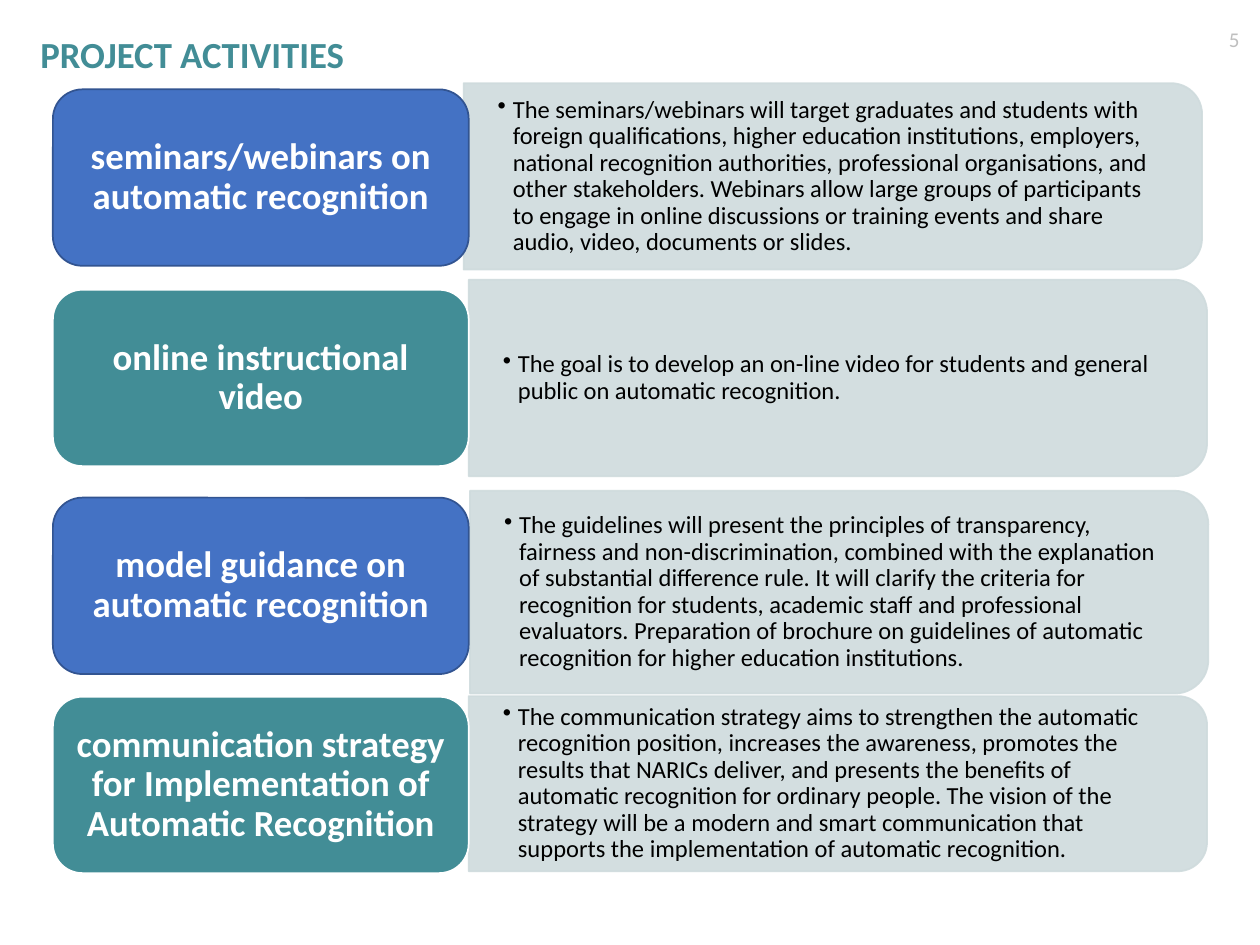
from lxml import etree
from pptx import Presentation
from pptx.dml.color import RGBColor
from pptx.enum.shapes import MSO_SHAPE
from pptx.enum.text import MSO_ANCHOR, PP_ALIGN
from pptx.oxml.ns import qn
from pptx.util import Inches, Pt

TITLE = "PROJECT ACTIVITIES"
NUMBER = "5"
TEAL, BLUE, NAVY, PALE, WHITE = "428D96", "4472C4", "325491", "CFDBDD", "FFFFFF"
SCHEMES = [(BLUE, NAVY), (TEAL, WHITE)]
LABEL_LEFT, LABEL_W, LABEL_H = 0.42, 3.3, 1.4
PANEL_W, TEXT_W, TEXT_SHARE = 5.86, 5.79, 0.9

# label, label top, panel left, panel middle, panel height, description
ACTIVITIES = [
    ("seminars/webinars on automatic recognition", 0.71, 3.68, 1.4, 1.48,
     "The seminars/webinars will target graduates and students with foreign qualifications, "
     "higher education institutions, employers, national recognition authorities, professional "
     "organisations, and other stakeholders. Webinars allow large groups of participants to engage "
     "in online discussions or training events and share audio, video, documents or slides."),
    ("online instructional video", 2.3, 3.72, 3.0, 1.56,
     "The goal is to develop an on-line video for students and general public on automatic "
     "recognition."),
    ("model guidance on automatic recognition", 3.95, 3.73, 4.7, 1.61,
     "The guidelines will present the principles of transparency, fairness and non-discrimination, "
     "combined with the explanation of substantial difference rule. It will clarify the criteria "
     "for recognition for students, academic staff and professional evaluators. Preparation of "
     "brochure on guidelines of automatic recognition for higher education institutions."),
    ("communication strategy for Implementation of Automatic Recognition", 5.53, 3.72, 6.22, 1.39,
     "The communication strategy aims to strengthen the automatic recognition position, increases "
     "the awareness, promotes the results that NARICs deliver, and presents the benefits of "
     "automatic recognition for ordinary people. The vision of the strategy will be a modern and "
     "smart communication that supports the implementation of automatic recognition."),
]


def rgb(value):
    """Return the colour of a hex string."""
    return RGBColor.from_string(value)


def set_text(sp, text, size, color, bold=False, align=PP_ALIGN.LEFT, insets=(0.1, 0.05),
             anchor=MSO_ANCHOR.MIDDLE, spacing=0.9, bullet=False):
    """Write one formatted paragraph into a shape."""
    tf = sp.text_frame
    tf.word_wrap = True
    tf.vertical_anchor = anchor
    tf.margin_left = tf.margin_right = Inches(insets[0])
    tf.margin_top = tf.margin_bottom = Inches(insets[1])
    p = tf.paragraphs[0]
    p.text = text
    p.alignment = align
    p.line_spacing = spacing
    if bullet:
        p.level = 1
        pPr = p._p.get_or_add_pPr()
        pPr.set("marL", str(Inches(0.12)))
        pPr.set("indent", str(-Inches(0.12)))
        etree.SubElement(pPr, qn("a:buChar")).set("char", "•")
    font = p.runs[0].font
    font.name, font.size, font.bold = "Calibri", Pt(size), bold
    font.color.rgb = rgb(color)


def add_box(slide, *frame):
    """Add an empty text box placed in inches."""
    return slide.shapes.add_textbox(*map(Inches, frame))


def add_block(slide, kind, frame, fill, line, alpha=None):
    """Add a filled and outlined preset shape placed in inches."""
    sp = slide.shapes.add_shape(kind, *map(Inches, frame))
    sp.shadow.inherit = False
    sp.fill.solid()
    sp.fill.fore_color.rgb = rgb(fill)
    sp.line.color.rgb = rgb(line)
    sp.line.width = Pt(1)
    if alpha:
        for color in sp._element.spPr.iter(qn("a:srgbClr")):
            etree.SubElement(color, qn("a:alpha")).set("val", str(alpha * 1000))
    return sp


def add_activity(slide, activity, scheme):
    """Add the panel, description and label of one activity."""
    label, top, left, middle, height, description = activity
    frame = (left + (PANEL_W - height) / 2, middle - PANEL_W / 2, height, PANEL_W)
    panel = add_block(slide, MSO_SHAPE.ROUND_2_SAME_RECTANGLE, frame, PALE, PALE, alpha=90)
    panel.rotation = 90
    text_h = height * TEXT_SHARE
    box = add_box(slide, left, middle - text_h / 2, TEXT_W, text_h)
    set_text(box, description, 14, "000000", insets=(0.27, 0.14), bullet=True)
    sp = add_block(slide, MSO_SHAPE.ROUNDED_RECTANGLE, (LABEL_LEFT, top, LABEL_W, LABEL_H), *scheme)
    set_text(sp, label, 21, WHITE, bold=True, align=PP_ALIGN.CENTER, insets=(0.09, 0.04))


def main():
    """Build and save the slide."""
    prs = Presentation()
    prs.slide_width, prs.slide_height = Inches(10), Inches(7.5)
    s = prs.slides.add_slide(prs.slide_layouts[6])
    set_text(add_box(s, 0.32, 0.29, 9.17, 0.5), TITLE, 21, TEAL, bold=True, insets=(0, 0),
             anchor=MSO_ANCHOR.TOP)
    for i, activity in enumerate(ACTIVITIES):
        add_activity(s, activity, SCHEMES[i % len(SCHEMES)])
    set_text(add_box(s, 9.59, 0.11, 0.41, 0.4), NUMBER, 12, "BFBFBF", align=PP_ALIGN.CENTER,
             spacing=1.0)
    prs.save("out.pptx")


if __name__ == "__main__":
    main()
